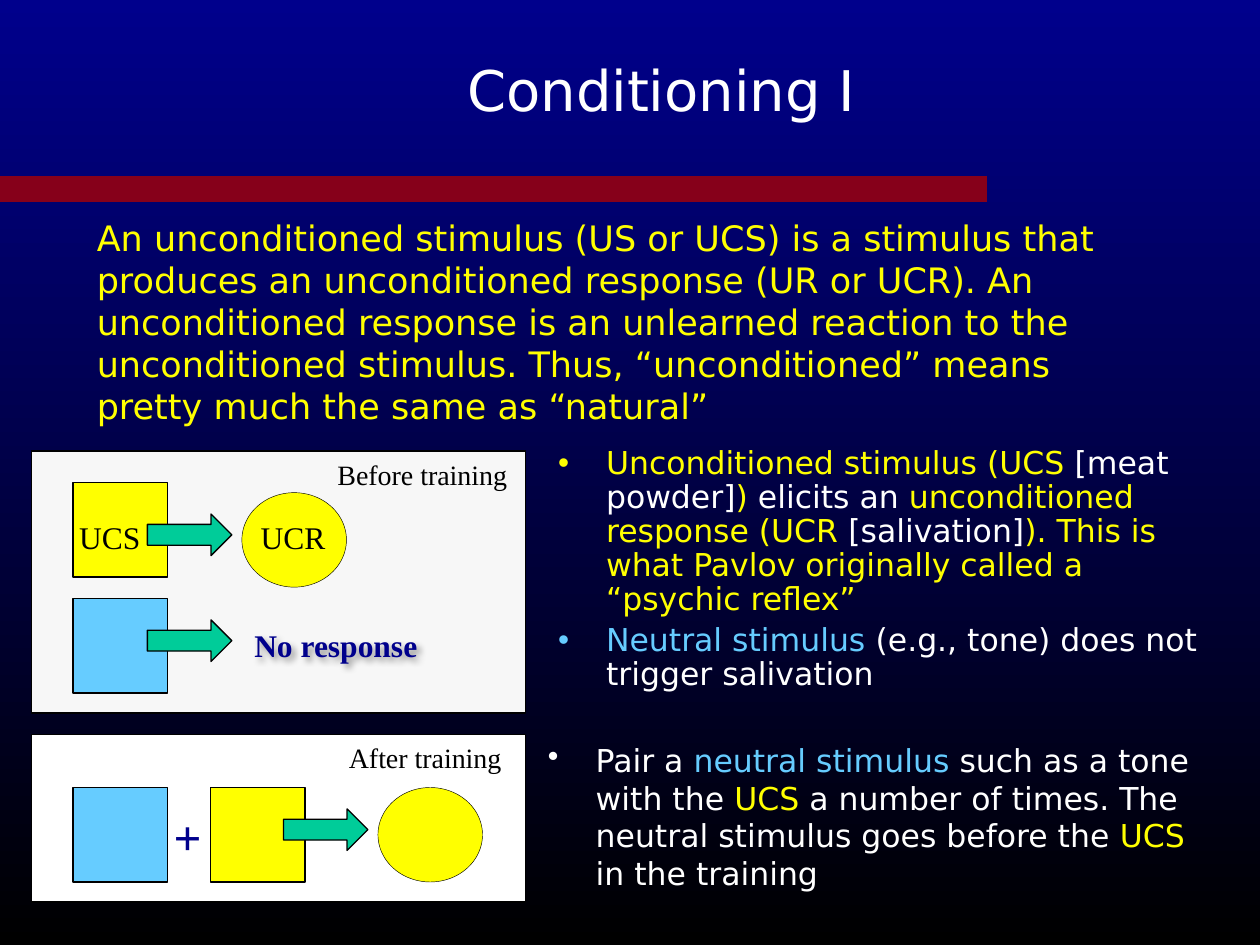
from lxml import etree
from pptx import Presentation
from pptx.dml.color import RGBColor
from pptx.enum.shapes import MSO_CONNECTOR, MSO_SHAPE
from pptx.enum.text import MSO_ANCHOR, MSO_AUTO_SIZE, PP_ALIGN
from pptx.oxml import parse_xml
from pptx.oxml.ns import nsdecls, qn
from pptx.util import Inches, Pt

RECT, OVAL, ARROW = MSO_SHAPE.RECTANGLE, MSO_SHAPE.OVAL, MSO_SHAPE.RIGHT_ARROW
LINE = MSO_CONNECTOR.STRAIGHT
GROW, FIXED = MSO_AUTO_SIZE.SHAPE_TO_FIT_TEXT, MSO_AUTO_SIZE.NONE
LEFT, CENTER = PP_ALIGN.LEFT, PP_ALIGN.CENTER
TOP, MIDDLE = MSO_ANCHOR.TOP, MSO_ANCHOR.MIDDLE
SANS, SERIF = "DejaVu Sans", "Times New Roman"
COLORS = {"navy": "00008C", "black": "000000", "white": "FFFFFF", "pale": "F7F7F7",
          "yellow": "FFFF00", "sky": "66CCFF", "green": "00CC99", "red": "86001A"}


def color(name):
    return RGBColor.from_string(COLORS[name])


def place(shape, box):
    shape.left, shape.top, shape.width, shape.height = map(Inches, box)


def add_run(para, text, size, hue, font=SANS, bold=False):
    run = para.add_run()
    run.text = text
    run.font.size = Pt(size)
    run.font.name = font
    run.font.bold = bold
    run.font.color.rgb = color(hue)


def add_shape(parent, kind, box, hue, width=0.75):
    shape = parent.shapes.add_shape(kind, *map(Inches, box))
    shape.shadow.inherit = False
    shape.fill.solid()
    shape.fill.fore_color.rgb = color(hue)
    shape.line.color.rgb = color("black")
    shape.line.width = Pt(width)


def add_label(parent, box, text, size, hue="black", bold=False):
    label = parent.shapes.add_textbox(*map(Inches, box))
    frame = label.text_frame
    frame.word_wrap = False
    frame.auto_size = GROW
    add_run(frame.paragraphs[0], text, size, hue, SERIF, bold)
    return label


def add_shade(label):
    label._element.spPr.append(parse_xml(
        f'<a:effectLst {nsdecls("a")}><a:outerShdw blurRad="50800" dist="38100" dir="2700000">'
        '<a:srgbClr val="000000"><a:alpha val="40000"/></a:srgbClr>'
        '</a:outerShdw></a:effectLst>'))


def fill_list(frame, items, spacing):
    frame.word_wrap = True
    frame.auto_size = FIXED
    frame.vertical_anchor = TOP
    for i, runs in enumerate(items):
        para = frame.add_paragraph() if i else frame.paragraphs[0]
        props = para._p.get_or_add_pPr()
        props.set("marL", str(Inches(0.38)))
        props.set("indent", str(-Inches(0.38)))
        etree.SubElement(props, qn("a:buChar")).set("char", "•")
        para.alignment = LEFT
        para.line_spacing = spacing
        para.space_before = Pt(4 if i else 0)
        for text, hue in runs:
            add_run(para, text, 18, hue)


def add_title(slide, box):
    title = slide.shapes.title
    place(title, box)
    frame = title.text_frame
    frame.auto_size = FIXED
    frame.vertical_anchor = MIDDLE
    frame.paragraphs[0].alignment = CENTER
    add_run(frame.paragraphs[0], "Conditioning I", 32, "white")


def add_rule(slide, y, end):
    rule = slide.shapes.add_connector(LINE, 0, Inches(y), Inches(end), Inches(y))
    rule.line.color.rgb = color("red")
    rule.line.width = Pt(15)
    etree.SubElement(rule._element.spPr, qn("a:effectLst"))


def add_intro(slide, box):
    frame = slide.shapes.add_textbox(*map(Inches, box)).text_frame
    frame.word_wrap = True
    frame.auto_size = GROW
    add_run(frame.paragraphs[0],
            "An unconditioned stimulus (US or UCS) is a stimulus that produces an "
            "unconditioned response (UR or UCR). An unconditioned response is an unlearned "
            "reaction to the unconditioned stimulus. Thus, “unconditioned” means pretty "
            "much the same as “natural”", 20, "yellow")


def add_before(slide, box):
    x, y = box[:2]
    group = slide.shapes.add_group_shape()
    add_shape(group, RECT, box, "pale")
    add_shape(group, OVAL, (x + 1.67, y + 0.33, 0.83, 0.75), "yellow", 0.25)
    for top, hue in ((0.25, "yellow"), (1.17, "sky")):
        add_shape(group, RECT, (x + 0.33, y + top, 0.75, 0.75), hue)
        add_shape(group, ARROW, (x + 0.92, y + top + 0.25 - (top > 1) * 0.08, 0.67, 0.33),
                  "green")
    add_shade(add_label(group, (x + 1.67, y + 1.34, 1.5, 0.4), "No response", 18, "navy", True))
    add_label(group, (x + 2.33, y, 1.55, 0.37), "Before training", 16)
    add_label(group, (x + 0.28, y + 0.48, 0.69, 0.4), "UCS", 18)
    add_label(group, (x + 1.72, y + 0.48, 0.72, 0.4), "UCR", 18)


def add_after(slide, box):
    x, y = box[:2]
    group = slide.shapes.add_group_shape()
    add_shape(group, RECT, box, "white")
    for left, hue in ((0.33, "sky"), (1.42, "yellow")):
        add_shape(group, RECT, (x + left, y + 0.42, 0.75, 0.75), hue)
    add_shape(group, OVAL, (x + 2.75, y + 0.42, 0.83, 0.75), "yellow", 0.25)
    add_shape(group, ARROW, (x + 2, y + 0.59, 0.67, 0.33), "green")
    add_label(group, (x + 1.03, y + 0.52, 0.42, 0.57), "+", 28, "navy", True)
    add_label(slide, (x + 2.42, y, 1.42, 0.37), "After training", 16)


def add_facts(slide, box):
    body = slide.placeholders[1]
    place(body, box)
    fill_list(body.text_frame, [
        [("Unconditioned stimulus (UCS ", "yellow"), ("[meat powder]", "white"),
         (")", "yellow"), (" elicits an ", "white"),
         ("unconditioned response (UCR ", "yellow"), ("[salivation]", "white"),
         ("). This is what Pavlov originally called a “psychic reflex”", "yellow")],
        [("Neutral stimulus", "sky"),
         (" (e.g., tone) does not trigger salivation", "white")],
    ], 0.9)


def add_pairing(slide, box):
    frame = slide.shapes.add_textbox(*map(Inches, box)).text_frame
    fill_list(frame, [
        [("Pair a ", "white"), ("neutral stimulus", "sky"),
         (" such as a tone with the ", "white"), ("UCS", "yellow"),
         (" a number of times. The neutral stimulus goes before the ", "white"),
         ("UCS", "yellow"), (" in the training", "white")],
    ], 1.0)


def add_back(slide):
    fill = slide.background.fill
    fill.gradient()
    fill.gradient_angle = 270
    for stop, hue, spot in zip(fill.gradient_stops, ("navy", "black"), (0, 1)):
        stop.color.rgb = color(hue)
        stop.position = spot


def main():
    deck = Presentation()
    deck.slide_width, deck.slide_height = Inches(10), Inches(7.5)
    slide = deck.slides.add_slide(deck.slide_layouts[1])
    add_back(slide)
    add_rule(slide, 1.5, 7.83)
    add_title(slide, (1.25, 0.17, 8, 1.08))
    add_facts(slide, (4.33, 3.5, 5.33, 2.17))
    add_after(slide, (0.25, 5.83, 3.92, 1.33))
    add_before(slide, (0.25, 3.58, 3.92, 2.08))
    add_pairing(slide, (4.25, 5.83, 5.33, 1.25))
    add_intro(slide, (0.67, 1.67, 8.5, 1.78))
    deck.save("out.pptx")


if __name__ == "__main__":
    main()
